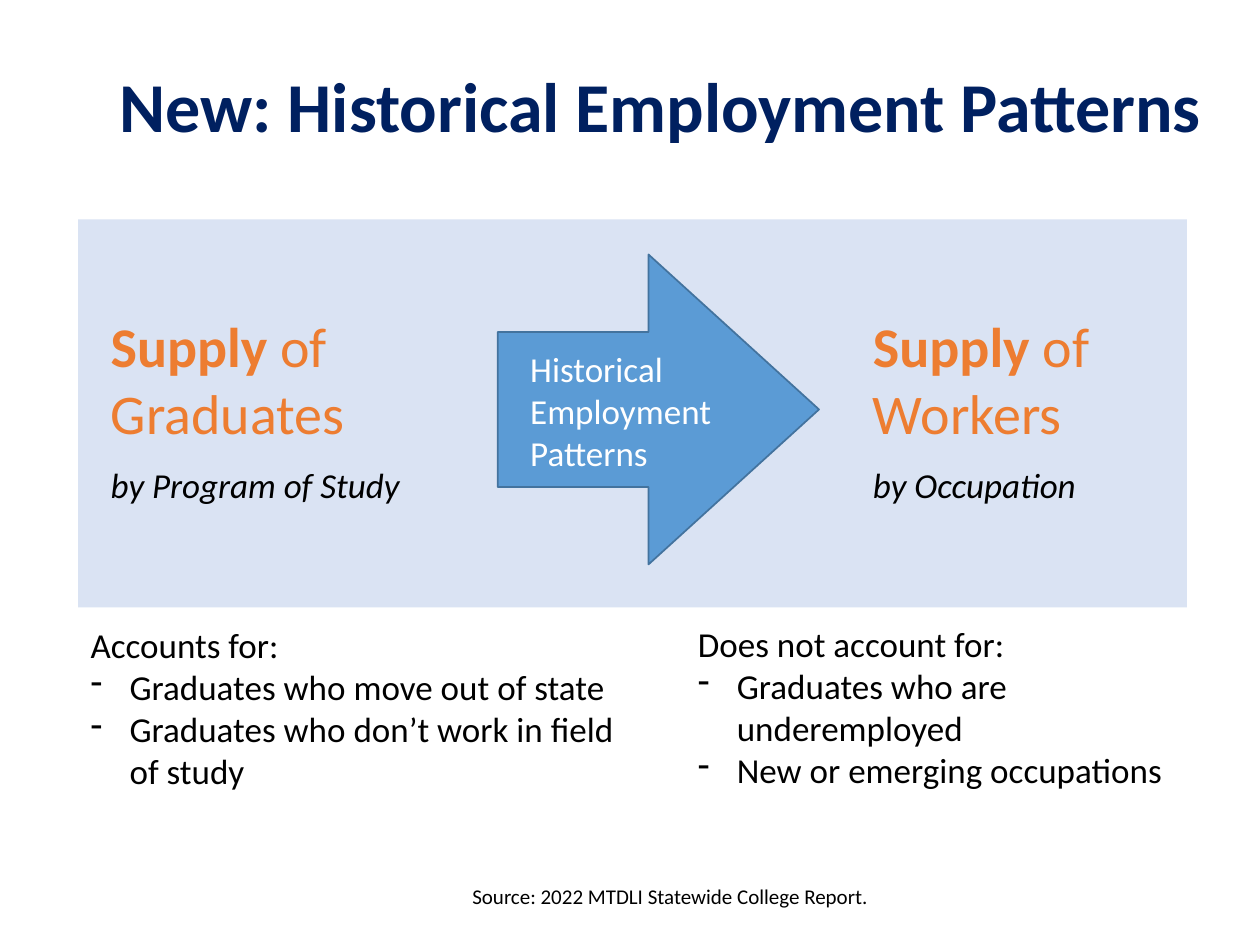
import pptx
import pptx.util
import pptx.dml.color
import pptx.enum.shapes
import pptx.enum.text
import lxml.etree
from pptx.util import Inches

RGBColor = pptx.dml.color.RGBColor
Shape = pptx.enum.shapes.MSO_SHAPE
NAVY = RGBColor(0x00, 0x20, 0x60)
PALE = RGBColor(0xDA, 0xE3, 0xF3)
BLUE = RGBColor(0x5B, 0x9B, 0xD5)
EDGE = RGBColor(0x43, 0x73, 0x9E)
ORANGE = RGBColor(0xED, 0x7D, 0x31)
BLACK = RGBColor(0, 0, 0)
WHITE = RGBColor(0xFF, 0xFF, 0xFF)


class Deck:
    face = "Calibri"

    def __init__(self, wide, high):
        self.show = pptx.Presentation()
        self.show.slide_width = Inches(wide)
        self.show.slide_height = Inches(high)
        self.slide = self.show.slides.add_slide(self.show.slide_layouts[5])

    def style(self, para, size, color, bold=None, slant=None):
        font = para.font
        font.name = self.face
        font.size = pptx.util.Pt(size)
        font.color.rgb = color
        font.bold = bold
        font.italic = slant

    def title(self, text, box):
        head = self.slide.shapes.title
        head.left, head.top, head.width, head.height = map(Inches, box)
        frame = head.text_frame
        frame.text = text
        frame.word_wrap = True
        frame.auto_size = pptx.enum.text.MSO_AUTO_SIZE.NONE
        frame.vertical_anchor = pptx.enum.text.MSO_ANCHOR.MIDDLE
        para = frame.paragraphs[0]
        para.alignment = pptx.enum.text.PP_ALIGN.LEFT
        para.line_spacing = 0.9
        self.style(para, 40, NAVY, bold=True)

    def shape(self, kind, box, fill, line=None):
        form = self.slide.shapes.add_shape(kind, *map(Inches, box))
        form.shadow.inherit = False
        form.fill.solid()
        form.fill.fore_color.rgb = fill
        if line is None:
            form.line.fill.background()
        else:
            form.line.color.rgb = line
            form.line.width = pptx.util.Pt(1)
        return form

    def text(self, text, box, size, color):
        frame = self.slide.shapes.add_textbox(*map(Inches, box)).text_frame
        frame.word_wrap = True
        para = frame.paragraphs[0]
        para.text = text
        self.style(para, size, color)
        return frame

    def supply(self, group, basis, box):
        frame = self.text("", box, 32, ORANGE)
        para = frame.paragraphs[0]
        for word, bold in (("Supply", True), (f" of {group}", False)):
            run = para.add_run()
            run.text = word
            run.font.bold = bold
        note = frame.add_paragraph()
        note.text = basis
        note.space_before = pptx.util.Pt(10)
        self.style(note, 20, BLACK, slant=True)

    def points(self, head, items, box):
        frame = self.text(head, box, 20, BLACK)
        for item in items:
            para = frame.add_paragraph()
            para.text = item
            props = para._p.get_or_add_pPr()
            props.set("marL", str(Inches(0.31)))
            props.set("indent", str(-Inches(0.31)))
            mark = lxml.etree.SubElement(props, pptx.oxml.ns.qn("a:buChar"))
            mark.set("char", "-")
            self.style(para, 20, BLACK)


def main():
    deck = Deck(10, 7.5)
    deck.shape(Shape.RECTANGLE, (0.62, 1.74, 8.8, 3.08), PALE)
    deck.title("New: Historical Employment Patterns", (0.85, 0.15, 8.8, 1.45))
    deck.text("Source: 2022 MTDLI Statewide College Report.",
              (3.65, 6.96, 6.19, 0.3), 12, BLACK)
    deck.supply("Workers", "by Occupation", (6.83, 2.42, 2.79, 2.29))
    deck.supply("Graduates", "by Program of Study", (0.78, 2.42, 3.01, 2.28))
    arrow = deck.shape(Shape.RIGHT_ARROW, (3.95, 2.02, 2.55, 2.46), BLUE, EDGE)
    arrow.adjustments[1] = 0.55
    deck.text("Historical Employment Patterns", (4.11, 2.71, 1.9, 1.11), 20, WHITE)
    deck.points("Accounts for:",
                ("Graduates who move out of state",
                 "Graduates who don’t work in field of study"),
                (0.62, 4.9, 4.38, 1.45))
    deck.points("Does not account for:",
                ("Graduates who are underemployed",
                 "New or emerging occupations"),
                (5.44, 4.89, 4.17, 1.45))
    deck.show.save("out.pptx")


if __name__ == "__main__":
    main()
